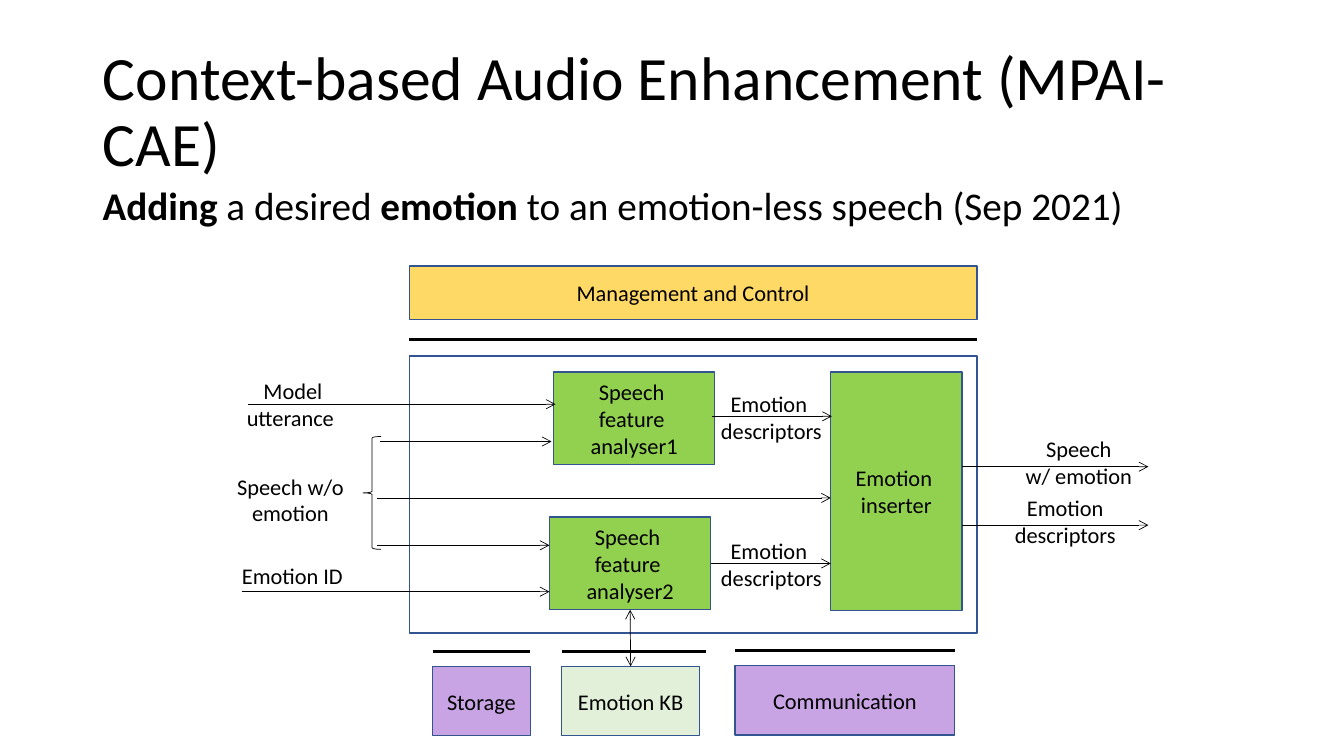
from dataclasses import dataclass

from lxml.etree import SubElement
from pptx import Presentation
from pptx.dml.color import RGBColor
from pptx.enum.shapes import MSO_CONNECTOR, MSO_SHAPE
from pptx.enum.text import MSO_ANCHOR, PP_ALIGN
from pptx.oxml.ns import qn
from pptx.util import Inches, Pt

COLORS = {"ink": "000000", "edge": "325491", "control": "FFD966",
          "module": "92D050", "service": "C9A4E4", "knowledge": "E2F0D9"}
FONT = "Calibri"


def rgb(name):
    return RGBColor.from_string(COLORS[name])


@dataclass
class Grid:
    """A box in inches, divided into columns and rows."""
    left: float
    top: float
    width: float
    height: float
    cols: int
    rows: int

    def point(self, c, r):
        return (Inches(self.left + c * self.width / self.cols),
                Inches(self.top + r * self.height / self.rows))

    def box(self, c, r, w, h):
        return (*self.point(c, r), Inches(w * self.width / self.cols),
                Inches(h * self.height / self.rows))


def style(p, size):
    p.font.name, p.font.size = FONT, Pt(size)
    p.font.color.rgb = rgb("ink")


def write(tf, text):
    tf.text = text
    for p in tf.paragraphs:
        p.alignment = PP_ALIGN.CENTER
        style(p, 16)


def block(s, grid, cell, fill=None, text="", kind=MSO_SHAPE.RECTANGLE,
          edge="edge", weight=1):
    sp = s.shapes.add_shape(kind, *grid.box(*cell))
    sp.shadow.inherit = False
    if fill:
        sp.fill.solid()
        sp.fill.fore_color.rgb = rgb(fill)
    else:
        sp.fill.background()
    sp.line.color.rgb, sp.line.width = rgb(edge), Pt(weight)
    if text:
        sp.text_frame.vertical_anchor = MSO_ANCHOR.MIDDLE
        write(sp.text_frame, text)
    return sp


def label(s, grid, cell, text, wrap=True):
    tf = s.shapes.add_textbox(*grid.box(*cell)).text_frame
    tf.word_wrap = wrap
    write(tf, text)


def line(s, grid, start, end, weight=0.5, heads=()):
    cn = s.shapes.add_connector(MSO_CONNECTOR.STRAIGHT,
                                *grid.point(*start), *grid.point(*end))
    cn.line.color.rgb, cn.line.width = rgb("ink"), Pt(weight)
    ln = cn.line._get_or_add_ln()
    for head in heads:
        SubElement(ln, qn(f"a:{head}"), type="arrow")
    SubElement(cn._element.spPr, qn("a:effectLst"))
    return cn


def arrow(s, grid, start, end):
    return line(s, grid, start, end, heads=["tailEnd"])


def heading(s, grid):
    title = s.shapes.title
    title.left, title.top, title.width, title.height = grid.box(0, 0, 1, 1.45)
    tf = title.text_frame
    tf.text = "Context-based Audio Enhancement (MPAI-CAE)"
    tf.vertical_anchor = MSO_ANCHOR.MIDDLE
    p = tf.paragraphs[0]
    p.alignment, p.line_spacing = PP_ALIGN.LEFT, 0.9
    style(p, 44)

    # Subtitle with two bold words
    tf = s.shapes.add_textbox(*grid.box(0, 1.4, 1, 0.73)).text_frame
    tf.word_wrap = True
    p = tf.paragraphs[0]
    p.line_spacing = 0.9
    style(p, 28)
    for text, bold in [("Adding", True), (" a desired ", False), ("emotion", True),
                       (" to an emotion-less speech (Sep 2021)", False)]:
        r = p.add_run()
        r.text, r.font.bold = text, bold


def control(s, grid):
    block(s, grid, (20.6, 0.4, 56.3, 5.3), "control", "Management and Control")
    line(s, grid, (20.6, 7.7), (76.9, 7.7), 2.25)


def modules(s, grid):
    block(s, grid, (20.6, 9.3, 56.3, 27.5))
    block(s, grid, (62.4, 10.9, 13, 23.7), "module", "Emotion \ninserter")
    for n, col, row in [(1, 34.9, 10.9), (2, 34.5, 25.3)]:
        analyser = block(s, grid, (col, row, 16, 9.2), "module",
                         f"Speech \nfeature \nanalyser{n}")
    # Descriptors passed to the inserter
    for row in (12.2, 26.8):
        label(s, grid, (50.4, row, 12.2, 6.4), "Emotion \ndescriptors", wrap=False)
    arrow(s, grid, (50.6, 15.3), (62.5, 15.3))
    arrow(s, grid, (50.5, 29.9), (62.4, 29.9)).begin_connect(analyser, 3)
    return analyser


def inputs(s, grid):
    for cell, text in [((3, 10.9, 12.1, 6.4), "Model utterance "),
                       ((1.7, 20.4, 14.2, 6.4), "Speech w/o\nemotion"),
                       ((2.5, 29.3, 13.5, 3.7), "Emotion ID ")]:
        label(s, grid, cell, text)
    for start, end, row in [(4.6, 35.1, 14.1), (17.7, 34.7, 17.8),
                            (17.4, 62.4, 23.4), (17.4, 34.5, 28.1),
                            (4, 34.5, 32.7)]:
        arrow(s, grid, (start, row), (end, row))
    block(s, grid, (16, 17.3, 1.8, 11.2), kind=MSO_SHAPE.LEFT_BRACE,
          edge="ink", weight=0.5)


def outputs(s, grid):
    for col, row, width, text in [(79.1, 16.7, 15.8, "Speech\nw/ emotion"),
                                  (78.7, 22.5, 13.9, "Emotion\ndescriptors")]:
        label(s, grid, (col, row, width, 6.4), text)
        arrow(s, grid, (75.4, row + 3.6), (93.9, row + 3.6))


def services(s, grid, analyser):
    made = {}
    for name, fill, col, row, width, bar in [
            ("Storage", "service", 22.9, 40.1, 9.7, 9.7),
            ("Emotion KB", "knowledge", 35.7, 40.1, 13.7, 14.3),
            ("Communication", "service", 52.9, 40, 21.8, 21.8)]:
        made[name] = block(s, grid, (col, row, width, 6.9), fill, name)
        line(s, grid, (col, row - 1.5), (col + bar, row - 1.5), 2.25)
    # Two-way link between the knowledge base and the second analyser
    link = line(s, grid, (42.6, 40.1), (42.5, 34.5), heads=["headEnd", "tailEnd"])
    link.begin_connect(made["Emotion KB"], 0)
    link.end_connect(analyser, 2)


def main():
    prs = Presentation()
    prs.slide_width, prs.slide_height = Inches(13.33), Inches(7.5)
    s = prs.slides.add_slide(prs.slide_layouts[5])
    heading(s, Grid(0.92, 0.4, 11.5, 2.13, 1, 2.13))
    diagram = Grid(2, 2.6, 9.6, 4.8, 96, 48)
    control(s, diagram)
    analyser = modules(s, diagram)
    inputs(s, diagram)
    outputs(s, diagram)
    services(s, diagram, analyser)
    prs.save("out.pptx")


if __name__ == "__main__":
    main()
